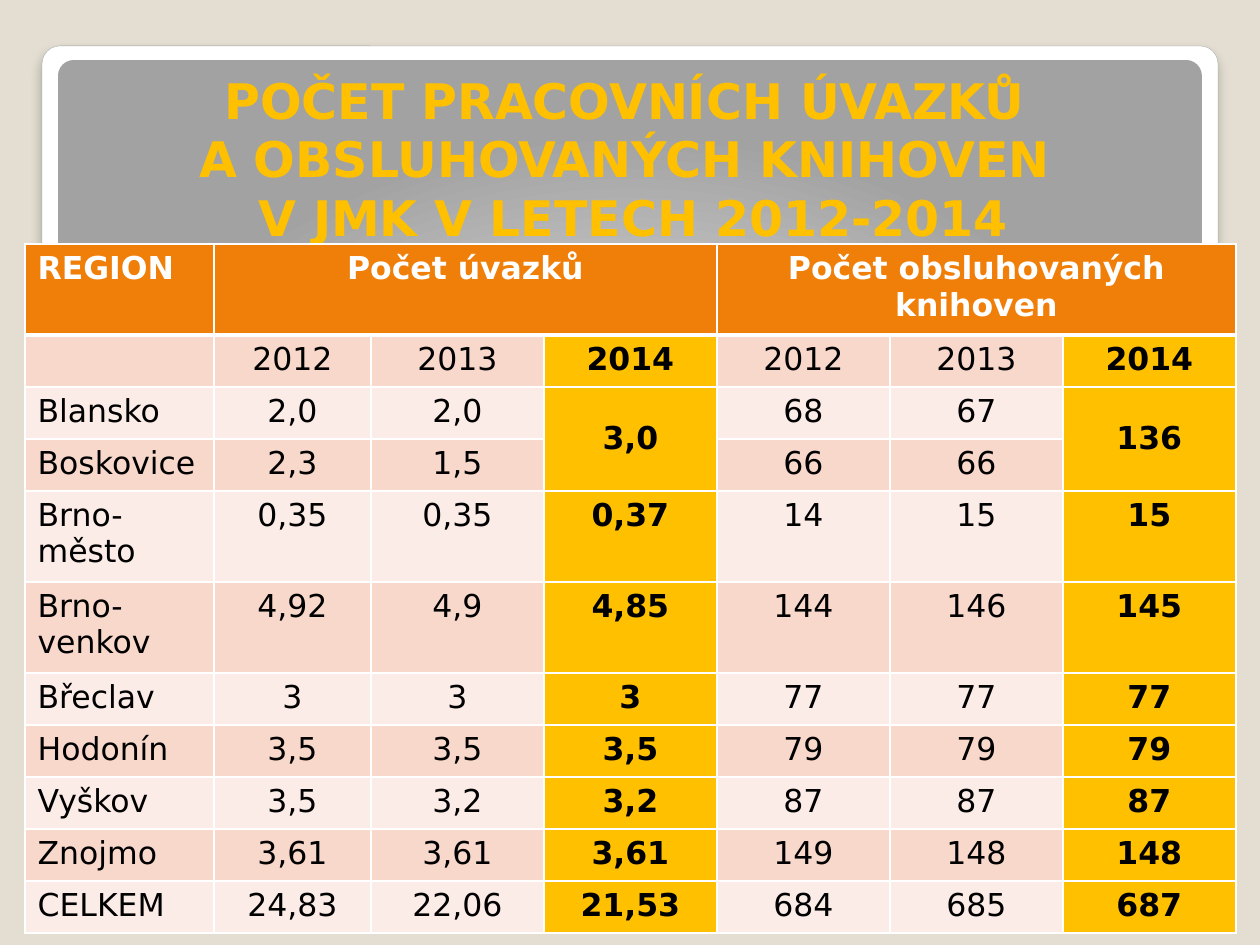
from lxml import etree
from pptx import Presentation
from pptx.dml.color import RGBColor as RGB
from pptx.enum.shapes import MSO_SHAPE as SHAPE
from pptx.enum.text import MSO_ANCHOR as ANCHOR, PP_ALIGN as ALIGN
from pptx.oxml import parse_xml
from pptx.oxml.ns import qn
from pptx.util import Pt

PX = 914400 / 126
FONT = "DejaVu Sans"
NS = 'xmlns:a="http://schemas.openxmlformats.org/drawingml/2006/main"'
GOLD, ORANGE, WHITE = "FFC000", "F07F09", "FFFFFF"
BANDS = ["FCECE7", "F9D8CC"]

COLS = [189, 157] + [173] * 5
LOW, HIGH = 52, 91
YEARS = ["2012", "2013", "2014"]
ROWS = [
    ["REGION", "Počet úvazků", "", "", "Počet obsluhovaných knihoven", "", ""],
    [""] + YEARS * 2,
    ["Blansko", "2,0", "2,0", "3,0", "68", "67", "136"],
    ["Boskovice", "2,3", "1,5", "", "66", "66", ""],
    ["Brno-město", "0,35", "0,35", "0,37", "14", "15", "15"],
    ["Brno-venkov", "4,92", "4,9", "4,85", "144", "146", "145"],
    ["Břeclav", "3", "3", "3", "77", "77", "77"],
    ["Hodonín", "3,5", "3,5", "3,5", "79", "79", "79"],
    ["Vyškov", "3,5", "3,2", "3,2", "87", "87", "87"],
    ["Znojmo", "3,61", "3,61", "3,61", "149", "148", "148"],
    ["CELKEM", "24,83", "22,06", "21,53", "684", "685", "687"],
]
TALL = {0, 4, 5}
TITLE = ("POČET PRACOVNÍCH ÚVAZKŮ \vA OBSLUHOVANÝCH KNIHOVEN \v"
         "V JMK V LETECH 2012-2014")


def px(num):
    return round(num * PX)


def color(code):
    return RGB.from_string(code)


def write(frame, text, size=18, ink="000000", bold=False, align=ALIGN.LEFT):
    frame.word_wrap = True
    para = frame.paragraphs[0]
    para.text = text
    para.alignment = align
    for run in para.runs:
        font = run.font
        font.name, font.size, font.bold = FONT, Pt(size), bold
        font.color.rgb = color(ink)


def panel(slide, box, stops, shade):
    """Rounded panel with a gradient; shade is the XML of its direction."""
    shape = slide.shapes.add_shape(SHAPE.ROUNDED_RECTANGLE, *map(px, box))
    shape.adjustments[0] = 0.021
    shape.shadow.inherit = False
    shape.line.fill.background()
    marks = "".join(f'<a:gs pos="{pos * 1000}"><a:srgbClr val="{code}"/></a:gs>'
                    for pos, code in stops)
    fill = parse_xml(f'<a:gradFill {NS} rotWithShape="1"><a:gsLst>{marks}'
                     f'</a:gsLst>{shade}</a:gradFill>')
    shape._element.spPr.find(qn("a:prstGeom")).addnext(fill)
    return shape


def frame(slide, left, top, width, height):
    # White card with a soft shadow
    card = panel(slide, (left, top, width, height),
                 [(0, WHITE), (98, WHITE), (99, "F7F7F7"), (100, "DADADA")],
                 '<a:lin ang="5400000" scaled="0"/>')
    card.line.color.rgb = color("A4A4A4")
    card.line.width = Pt(0.16)
    card._element.spPr.find(qn("a:effectLst")).append(parse_xml(
        f'<a:outerShdw {NS} blurRad="{Pt(6)}" dist="{Pt(4)}" dir="5400000" '
        'algn="t" rotWithShape="0"><a:srgbClr val="000000">'
        '<a:alpha val="25000"/></a:srgbClr></a:outerShdw>'))
    # Grey panel inside it
    panel(slide, (left + 16, top + 14, width - 32, 756),
          [(0, WHITE), (55, "E1E1E1"), (100, "A2A2A2")],
          '<a:path path="circle"><a:fillToRect l="50000" t="175000" '
          'r="50000" b="-75000"/></a:path>')


def heading(slide, left, top, width, height):
    title = slide.shapes.title
    title.left, title.top = px(left), px(top)
    title.width, title.height = px(width), px(height)
    title.text_frame.vertical_anchor = ANCHOR.BOTTOM
    write(title.text_frame, TITLE, size=28, ink=GOLD, bold=True,
          align=ALIGN.CENTER)
    # Bring the title in front of the panels
    slide.shapes._spTree.append(title._element)


def border(cell, row):
    props = cell._tc.get_or_add_tcPr()
    wide = {"lnT": 3 if row == 1 else 1, "lnB": 3 if row == 0 else 1}
    for spot, side in enumerate(["lnL", "lnR", "lnT", "lnB"]):
        line = parse_xml(
            f'<a:{side} {NS} w="{Pt(wide.get(side, 1))}"><a:solidFill>'
            f'<a:srgbClr val="{WHITE}"/></a:solidFill></a:{side}>')
        props.insert(spot, line)


def grid(slide, left, top):
    highs = [HIGH if row in TALL else LOW for row in range(len(ROWS))]
    table = slide.shapes.add_table(
        len(ROWS), len(COLS), px(left), px(top),
        px(sum(COLS)), px(sum(highs))).table
    table.horz_banding = False
    for part, width in zip(table.columns, COLS):
        part.width = px(width)
    for part, high in zip(table.rows, highs):
        part.height = px(high)

    # Cells: orange head, pink bands, gold columns for 2014
    for row, texts in enumerate(ROWS):
        for col, text in enumerate(texts):
            cell = table.cell(row, col)
            head, last = row == 0, col in (3, 6)
            back = ORANGE if head else GOLD if last else BANDS[row % 2]
            cell.fill.solid()
            cell.fill.fore_color.rgb = color(back)
            border(cell, row)
            write(cell.text_frame, text, ink=WHITE if head else "000000",
                  bold=head or last,
                  align=ALIGN.CENTER if col else ALIGN.LEFT)

    # Merged heads, and the joint figures of the first two regions
    for col in (1, 4):
        table.cell(0, col).merge(table.cell(0, col + 2))
    for col in (3, 6):
        table.cell(2, col).merge(table.cell(3, col))
        table.cell(2, col).vertical_anchor = ANCHOR.MIDDLE


def main():
    deck = Presentation()
    deck.slide_width, deck.slide_height = px(1260), px(945)
    slide = deck.slides.add_slide(deck.slide_layouts[5])
    back = slide.background.fill
    back.solid()
    back.fore_color.rgb = color("E3DED1")
    frame(slide, 42, 46, 1176, 854)
    heading(slide, 69, 55, 1128, 198)
    grid(slide, 25, 244)
    deck.save("out.pptx")


if __name__ == "__main__":
    main()
